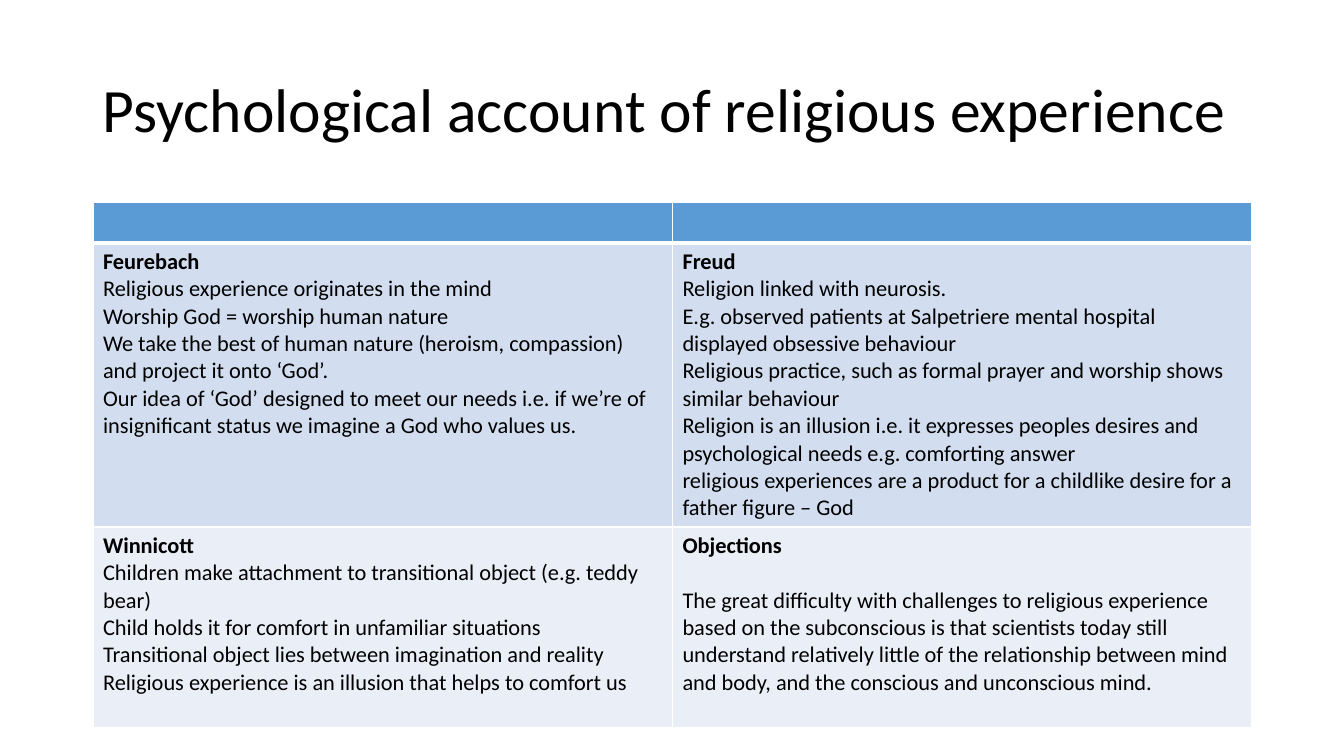
import pptx
import pptx.dml.color
import pptx.enum.text
import pptx.oxml
import pptx.oxml.ns
import pptx.util

TITLE = "Psychological account of religious experience"
# Each view: heading, then its points
VIEWS = [
    [
        ("Feurebach", [
            "Religious experience originates in the mind",
            "Worship God = worship human nature",
            "We take the best of human nature (heroism, compassion) and project it onto ‘God’.",
            "Our idea of ‘God’ designed to meet our needs i.e. if we’re of insignificant "
            "status we imagine a God who values us.",
        ]),
        ("Freud", [
            "Religion linked with neurosis.",
            "E.g. observed patients at Salpetriere mental hospital displayed obsessive behaviour",
            "Religious practice, such as formal prayer and worship shows similar behaviour",
            "Religion is an illusion i.e. it expresses peoples desires and psychological "
            "needs e.g. comforting answer",
            "religious experiences are a product for a childlike desire for a father figure – God",
        ]),
    ],
    [
        ("Winnicott", [
            "Children make attachment to transitional object (e.g. teddy bear)",
            "Child holds it for comfort in unfamiliar situations",
            "Transitional object lies between imagination and reality Religious experience "
            "is an illusion that helps to comfort us",
        ]),
        ("Objections", [
            "The great difficulty with challenges to religious experience based on the "
            "subconscious is that scientists today still understand relatively little of the "
            "relationship between mind and body, and the conscious and unconscious mind.",
        ]),
    ],
]
GAP_AFTER_HEADING = {"Objections": 19.5}

THEME = {
    "font": "Calibri", "text": "000000", "title_size": 44, "body_size": 16,
    "row_fills": ["5B9BD5", "D2DEEF", "EAEFF7"],
    "border": "FFFFFF", "border_width": 1, "header_rule": 3,
}

SLIDE_W, SLIDE_H = 1344, 756
LEFT, WIDTH = 93, 1159
TITLE_TOP, TITLE_H = 40, 146
TABLE_TOP = 202
ROW_HEIGHTS = [41, 284, 201]


def px(length):
    return pptx.util.Emu(round(length * 914400 / 100.8))


def rgb(name):
    return pptx.dml.color.RGBColor.from_string(name)


def add_text(paragraph, text, size, bold=False):
    run = paragraph.add_run()
    run.text = text
    run.font.name = THEME["font"]
    run.font.size = pptx.util.Pt(size)
    run.font.bold = bold
    run.font.color.rgb = rgb(THEME["text"])


def add_title(slide):
    title = slide.shapes.add_textbox(px(LEFT), px(TITLE_TOP), px(WIDTH), px(TITLE_H))
    frame = title.text_frame
    frame.word_wrap = True
    frame.vertical_anchor = pptx.enum.text.MSO_ANCHOR.MIDDLE
    frame.paragraphs[0].line_spacing = 0.9
    add_text(frame.paragraphs[0], TITLE, THEME["title_size"])


def set_borders(cell, top, bottom):
    """Draw all four cell borders; top and bottom widths are in points."""
    side = THEME["border_width"]
    widths = {"L": side, "R": side, "T": top, "B": bottom}
    properties = cell._tc.get_or_add_tcPr()
    for position, (edge, width) in enumerate(widths.items()):
        properties.insert(position, pptx.oxml.parse_xml(
            f'<a:ln{edge} {pptx.oxml.ns.nsdecls("a")} w="{pptx.util.Pt(width)}">'
            f'<a:solidFill><a:srgbClr val="{THEME["border"]}"/></a:solidFill></a:ln{edge}>'))


def fill_view(cell, heading, points):
    frame = cell.text_frame
    add_text(frame.paragraphs[0], heading, THEME["body_size"], bold=True)
    for point in points:
        add_text(frame.add_paragraph(), point, THEME["body_size"])
    frame.paragraphs[1].space_before = pptx.util.Pt(GAP_AFTER_HEADING.get(heading, 0))


def add_views_table(slide):
    columns = len(VIEWS[0])
    table = slide.shapes.add_table(
        len(ROW_HEIGHTS), columns,
        px(LEFT), px(TABLE_TOP), px(WIDTH), px(sum(ROW_HEIGHTS))).table
    for column in table.columns:
        column.width = px(WIDTH / columns)
    thin, rule = THEME["border_width"], THEME["header_rule"]
    for index, height in enumerate(ROW_HEIGHTS):
        table.rows[index].height = px(height)
        for cell in table.rows[index].cells:
            cell.fill.solid()
            cell.fill.fore_color.rgb = rgb(THEME["row_fills"][index])
            set_borders(cell, rule if index == 1 else thin, rule if index == 0 else thin)
    for row, views in enumerate(VIEWS, start=1):
        for column, (heading, points) in enumerate(views):
            fill_view(table.cell(row, column), heading, points)


def main():
    deck = pptx.Presentation()
    deck.slide_width, deck.slide_height = px(SLIDE_W), px(SLIDE_H)
    slide = deck.slides.add_slide(deck.slide_layouts[6])
    add_title(slide)
    add_views_table(slide)
    deck.save("out.pptx")


if __name__ == "__main__":
    main()
